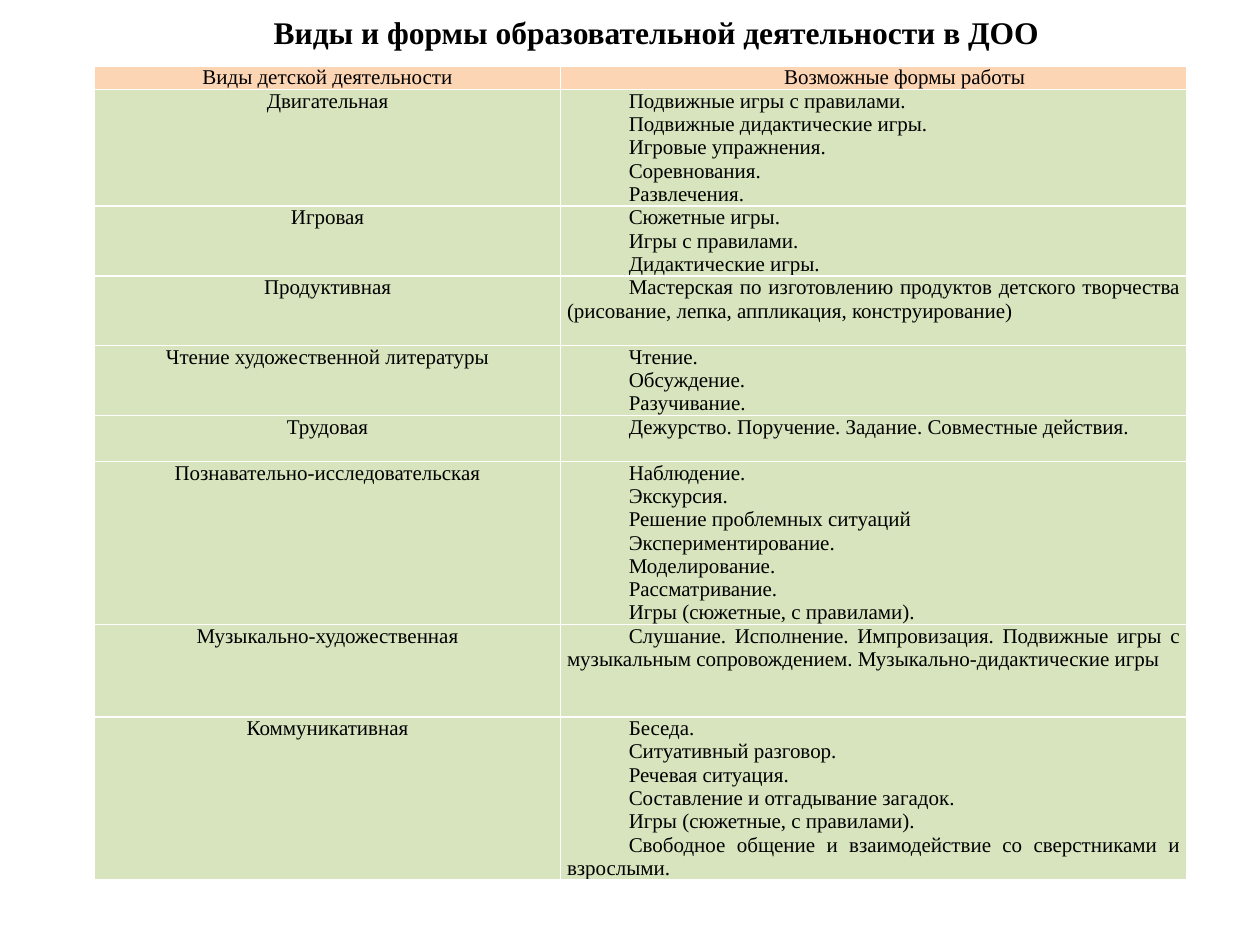
from pptx import Presentation
from pptx.dml.color import RGBColor
from pptx.enum.text import MSO_ANCHOR as Anchor, MSO_AUTO_SIZE as Auto, PP_ALIGN as Align
from pptx.util import Inches, Pt

WIDE, HIGH = Inches(10), Inches(7.5)
FONT = "Times New Roman"
INK, PEACH, GREEN = "000000", "FCD5B5", "D7E4BD"
LINE = Inches(0.183)
COLS = (0.37, 0.497)
TITLE = "Виды и формы образовательной деятельности в ДОО"
HEAD = ("Виды детской деятельности", "Возможные формы работы")
ROWS = [
    (5, "Двигательная", [
        "Подвижные игры с правилами.", "Подвижные дидактические игры.",
        "Игровые упражнения.", "Соревнования.", "Развлечения."]),
    (3, "Игровая", ["Сюжетные игры.", "Игры с правилами.", "Дидактические игры."]),
    (3, "Продуктивная", [
        "Мастерская по изготовлению продуктов детского творчества "
        "(рисование, лепка, аппликация, конструирование)"]),
    (3, "Чтение художественной литературы", ["Чтение.", "Обсуждение.", "Разучивание."]),
    (2, "Трудовая", ["Дежурство. Поручение. Задание. Совместные действия."]),
    (7, "Познавательно-исследовательская", [
        "Наблюдение.", "Экскурсия.", "Решение проблемных ситуаций",
        "Экспериментирование.", "Моделирование.", "Рассматривание.",
        "Игры (сюжетные, с правилами)."]),
    (4, "Музыкально-художественная", [
        "Слушание. Исполнение. Импровизация. Подвижные игры с музыкальным "
        "сопровождением. Музыкально-дидактические игры"]),
    (7, "Коммуникативная", [
        "Беседа.", "Ситуативный разговор.", "Речевая ситуация.",
        "Составление и отгадывание загадок.", "Игры (сюжетные, с правилами).",
        "Свободное общение и взаимодействие со сверстниками и взрослыми."]),
]


def color(code):
    return RGBColor.from_string(code)


def write(frame, lines, size, align, bold=False, indent=True):
    frame.text = "\n".join(lines)
    for para in frame.paragraphs:
        para.alignment = align
        font = para.font
        font.name, font.size, font.bold = FONT, Pt(size), bold
        font.color.rgb = color(INK)
        if indent:
            para._p.get_or_add_pPr().set("indent", str(Inches(0.49)))


def add_title(slide, left, top, width, height):
    title = slide.shapes.title
    title.left, title.top, title.width, title.height = left, top, width, height
    frame = title.text_frame
    frame.auto_size = Auto.NONE
    frame.vertical_anchor = Anchor.TOP
    frame.margin_top = Inches(0.08)
    write(frame, [TITLE], 18, Align.CENTER, bold=True)


def fill_cell(cell, lines, fill, align, indent):
    cell.margin_left = cell.margin_right = Inches(0.05)
    cell.margin_top = cell.margin_bottom = 0
    cell.fill.solid()
    cell.fill.fore_color.rgb = color(fill)
    write(cell.text_frame, lines, 12, align, indent=indent)


def add_grid(slide, left, top, width):
    data = [(1, HEAD[0], [HEAD[1]])] + ROWS
    high = sum(row[0] for row in data) * LINE
    table = slide.shapes.add_table(len(data), 2, left, top, width, high).table
    table.first_row = table.horz_banding = False
    for col, share in zip(table.columns, COLS):
        col.width = int(width * share / sum(COLS))
    for num, (count, kind, forms) in enumerate(data):
        table.rows[num].height = count * LINE
        fill = GREEN if num else PEACH
        align = Align.JUSTIFY if num else Align.CENTER
        fill_cell(table.cell(num, 0), [kind], fill, Align.CENTER, False)
        fill_cell(table.cell(num, 1), forms, fill, align, True)


def main():
    deck = Presentation()
    deck.slide_width, deck.slide_height = WIDE, HIGH
    slide = deck.slides.add_slide(deck.slide_layouts[5])
    add_grid(slide, int(WIDE * 0.075), int(HIGH * 0.07), int(WIDE * sum(COLS)))
    add_title(slide, int(WIDE * 0.02), int(HIGH * 0.003), int(WIDE * 0.953), int(HIGH * 0.095))
    deck.save("out.pptx")


if __name__ == "__main__":
    main()
